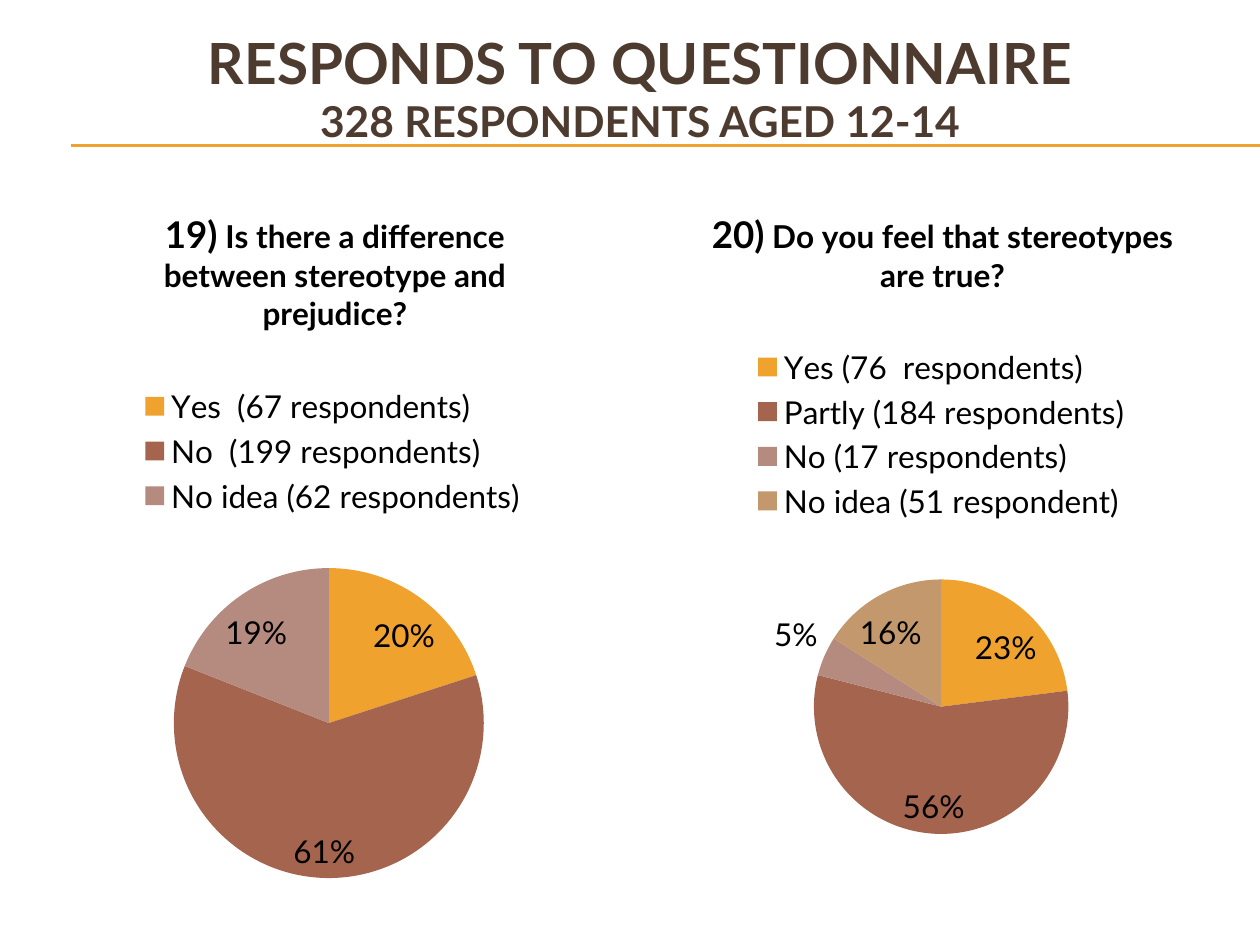
from dataclasses import dataclass

from lxml import etree
from pptx import Presentation
from pptx.chart.data import CategoryChartData
from pptx.dml.color import RGBColor
from pptx.enum.chart import XL_CHART_TYPE, XL_LABEL_POSITION, XL_LEGEND_POSITION
from pptx.enum.shapes import MSO_CONNECTOR
from pptx.enum.text import MSO_ANCHOR, MSO_AUTO_SIZE, PP_ALIGN
from pptx.oxml.ns import qn
from pptx.util import Inches, Pt

PIE = XL_CHART_TYPE.PIE
BEST_FIT = XL_LABEL_POSITION.BEST_FIT
TOP = XL_LEGEND_POSITION.TOP
STRAIGHT = MSO_CONNECTOR.STRAIGHT
MIDDLE = MSO_ANCHOR.MIDDLE
NO_AUTOFIT = MSO_AUTO_SIZE.NONE
CENTER = PP_ALIGN.CENTER


@dataclass(frozen=True)
class Theme:
    font: str = "Lato"
    title: str = "4E3B30"
    text: str = "000000"
    rule: str = "F0A22E"
    slices: tuple = ("F0A22E", "A5644E", "B58B80", "C3986D")
    title_size: float = 32.4
    subtitle_size: float = 24.3
    number_size: float = 21
    body_size: float = 18


class SlideBuilder:
    def __init__(self, prs, theme):
        self.theme = theme
        self.s = prs.slides.add_slide(prs.slide_layouts[5])

    def format_font(self, font, size, color, bold=False):
        font.name = self.theme.font
        font.size = Pt(size)
        font.bold = bold
        font.color.rgb = RGBColor.from_string(color)

    def rule(self, x1, x2, y):
        line = self.s.shapes.add_connector(
            STRAIGHT, Inches(x1), Inches(y), Inches(x2), Inches(y))
        line.line.color.rgb = RGBColor.from_string(self.theme.rule)
        line.line.width = Pt(0.75)
        etree.SubElement(line._element.spPr, qn("a:effectLst"))

    def title(self, box, lines):
        sp = self.s.shapes.title
        sp.left, sp.top, sp.width, sp.height = map(Inches, box)
        tf = sp.text_frame
        tf.text = "\n".join(lines)
        tf.auto_size = NO_AUTOFIT
        tf.vertical_anchor = MIDDLE
        tf.margin_top = 0
        tf.margin_bottom = Inches(0.54)
        sizes = (self.theme.title_size, self.theme.subtitle_size)
        for p, size in zip(tf.paragraphs, sizes):
            p.alignment = CENTER
            p.space_before = Pt(0)
            self.format_font(p.runs[0].font, size, self.theme.title, True)

    def place(self, chart, part, box, area):
        left, top, width, height = area
        element = chart._chartSpace.xpath(f"c:chart//c:{part}")[0]
        for old in element.findall(qn("c:layout")):
            element.remove(old)
        layout = etree.Element(qn("c:layout"))
        element.insert(0 if part == "plotArea" else 1, layout)
        manual = etree.SubElement(layout, qn("c:manualLayout"))
        values = [("xMode", "edge"), ("yMode", "edge"),
                  ("x", (box[0] - left) / width), ("y", (box[1] - top) / height)]
        if part == "plotArea":
            values.insert(0, ("layoutTarget", "inner"))
        if len(box) == 4:
            values += [("w", box[2] / width), ("h", box[3] / height)]
        for tag, value in values:
            etree.SubElement(manual, qn(f"c:{tag}")).set("val", str(value))

    def pie(self, area, number, question, answers, title_at, legend_box, pie_box):
        theme = self.theme
        data = CategoryChartData()
        data.categories = list(answers)
        data.add_series("Series 1", list(answers.values()))
        chart = self.s.shapes.add_chart(PIE, *map(Inches, area), data).chart
        self.format_font(chart.font, theme.body_size, theme.text)

        chart.has_title = True
        p = chart.chart_title.text_frame.paragraphs[0]
        p.alignment = CENTER
        for text, size in ((number, theme.number_size), (question, theme.body_size)):
            r = p.add_run()
            r.text = text
            self.format_font(r.font, size, theme.text, True)
        chart.chart_title.include_in_layout = False

        chart.has_legend = True
        chart.legend.position = TOP
        chart.legend.include_in_layout = False
        self.format_font(chart.legend.font, theme.body_size, theme.text)

        plot = chart.plots[0]
        plot.vary_by_categories = True
        for i, color in enumerate(theme.slices[:len(answers)]):
            fill = plot.series[0].points[i].format.fill
            fill.solid()
            fill.fore_color.rgb = RGBColor.from_string(color)
        plot.has_data_labels = True
        labels = plot.data_labels
        labels.show_value = False
        labels.show_percentage = True
        labels.number_format = "0%"
        labels.number_format_is_linked = False
        labels.position = BEST_FIT
        self.format_font(labels.font, theme.body_size, theme.text)

        for part, box in (("title", title_at), ("legend", legend_box),
                          ("plotArea", pie_box)):
            self.place(chart, part, box, area)


def main():
    prs = Presentation()
    prs.slide_width, prs.slide_height = Inches(10), Inches(7.5)
    slide = SlideBuilder(prs, Theme())
    for y in (1.15, 1.16):
        slide.rule(0.56, 10, y)
    slide.title((0.33, 0.5, 9.5, 0.92),
                ("RESPONDS TO QUESTIONNAIRE", "328 RESPONDENTS AGED 12-14"))
    slide.pie(
        (0.33, 1.41, 4.58, 5.7), "19)",
        " Is there a difference between stereotype and prejudice?",
        {"Yes  (67 respondents)": 20, "No  (199 respondents)": 61,
         "No idea (62 respondents)": 19},
        (1.27, 1.63), (1.08, 3.02, 3.12, 1.12), (1.38, 4.51, 2.46, 2.46))
    slide.pie(
        (5.08, 1.41, 4.75, 5.7), "20)",
        " Do you feel that stereotypes are true?",
        {"Yes (76  respondents)": 23, "Partly (184 respondents)": 56,
         "No (17 respondents)": 5, "No idea (51 respondent)": 16},
        (5.62, 1.63), (5.94, 2.71, 3.06, 1.47), (6.46, 4.6, 2.02, 2.02))
    prs.save("out.pptx")


if __name__ == "__main__":
    main()
